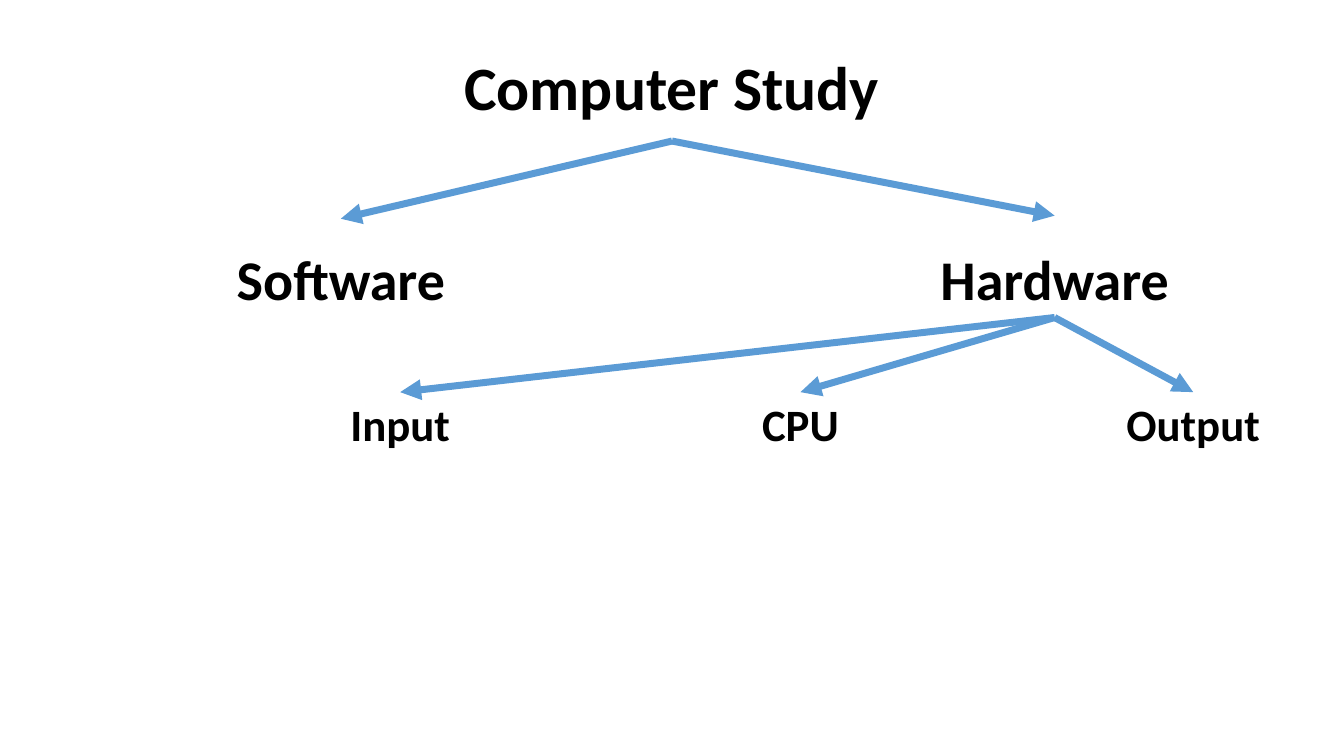
import pptx
import pptx.dml.color
import pptx.enum.shapes
import pptx.enum.text
import pptx.oxml.ns
import pptx.util
from lxml import etree

BLACK = pptx.dml.color.RGBColor(0x00, 0x00, 0x00)
BLUE = pptx.dml.color.RGBColor(0x5B, 0x9B, 0xD5)
WIDE = pptx.util.Inches(13.33)
HIGH = pptx.util.Inches(7.5)
TOP, BOTTOM = 0, 2


def col(share):
    """Percent of the slide's width."""
    return round(WIDE * share / 100)


def row(share):
    """Percent of the slide's height."""
    return round(HIGH * share / 100)


def label(slide, text, mid, top, width, height, size):
    """Bold text centred on the column mid."""
    box = slide.shapes.add_textbox(
        col(mid - width / 2), row(top), col(width), row(height))
    frame = box.text_frame
    frame.word_wrap = True
    frame.text = text
    para = frame.paragraphs[0]
    para.alignment = pptx.enum.text.PP_ALIGN.CENTER
    font = para.runs[0].font
    font.name = "Calibri"
    font.size = pptx.util.Pt(size)
    font.bold = True
    font.color.rgb = BLACK
    return box


def arrow(slide, start, end, tip=None):
    """Arrow from the foot of start to the top of end, or to the row tip."""
    line = slide.shapes.add_connector(
        pptx.enum.shapes.MSO_CONNECTOR.STRAIGHT,
        start.left + start.width // 2, start.top + start.height,
        end.left + end.width // 2, end.top if tip is None else row(tip))
    line.begin_connect(start, BOTTOM)
    if tip is None:
        line.end_connect(end, TOP)
    line.line.color.rgb = BLUE
    line.line.width = pptx.util.Pt(5)
    qn = pptx.oxml.ns.qn
    props = line._element.spPr
    etree.SubElement(props.find(qn("a:ln")), qn("a:tailEnd"), type="triangle")
    etree.SubElement(props, qn("a:effectLst"))


def main():
    deck = pptx.Presentation()
    deck.slide_width, deck.slide_height = WIDE, HIGH
    slide = deck.slides.add_slide(deck.slide_layouts[6])

    # Title
    title = label(slide, "Computer Study", 50, 5.33, 86.25, 13.33, 44)
    title.text_frame.vertical_anchor = pptx.enum.text.MSO_ANCHOR.MIDDLE
    title.text_frame.paragraphs[0].line_spacing = 0.9

    # Two branches, with arrows that stop short of the words
    branch = {}
    for name, mid, tip in (("Hardware", 78.47, 28.53), ("Software", 25.36, 28.93)):
        branch[name] = label(slide, name, mid, 31.73, 43.06, 10.27, 40)
        arrow(slide, title, branch[name], tip)

    # Parts of the hardware
    for name, mid, width in (("Input", 29.78, 18.9), ("CPU", 59.56, 27.46),
                             ("Output", 88.78, 20.63)):
        part = label(slide, name, mid, 51.87, width, 8.53, 32)
        arrow(slide, branch["Hardware"], part)

    deck.save("out.pptx")


if __name__ == "__main__":
    main()
